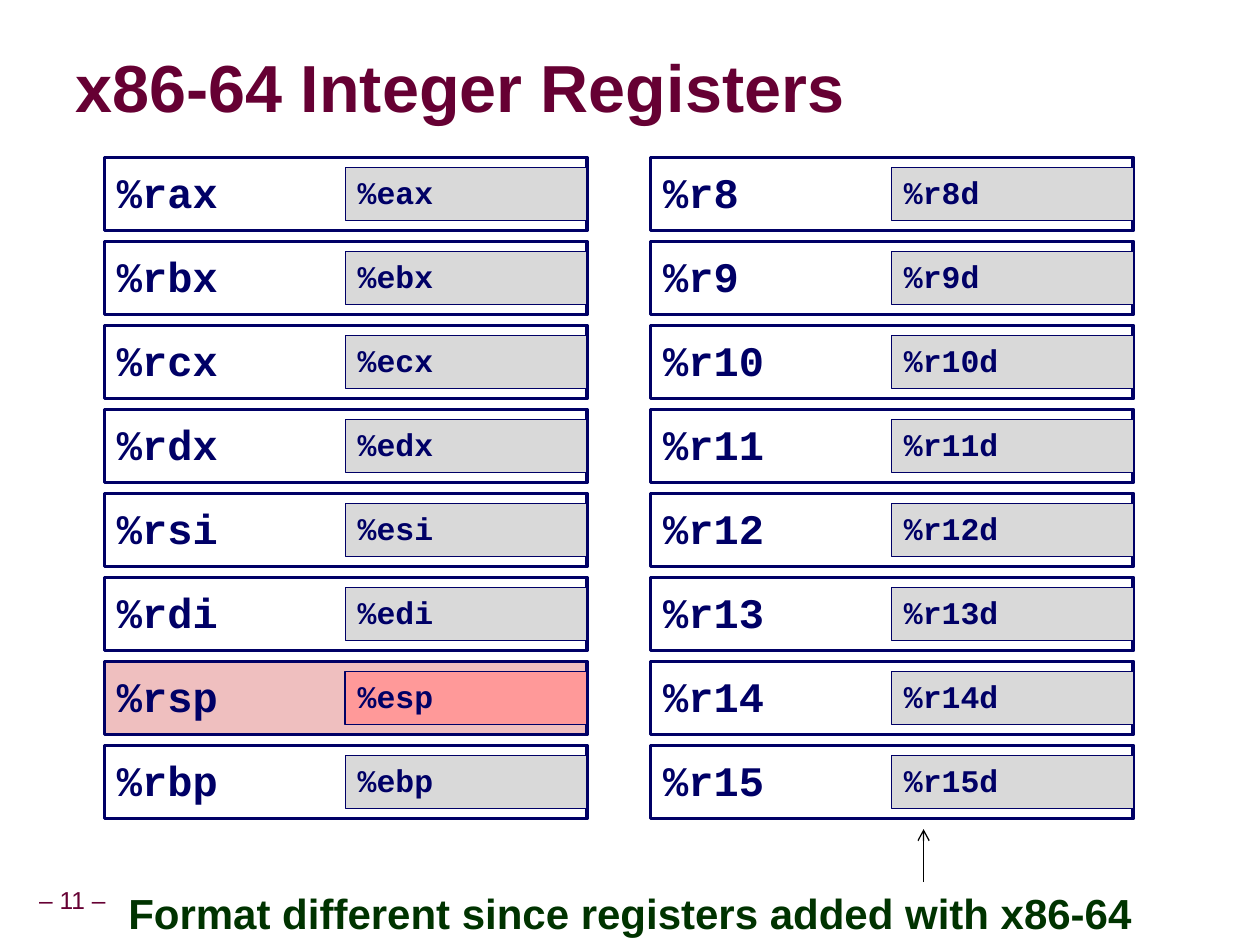
from pptx import Presentation
from pptx.dml.color import RGBColor
from pptx.enum.shapes import MSO_CONNECTOR, MSO_SHAPE
from pptx.enum.text import MSO_ANCHOR, PP_ALIGN
from pptx.oxml.ns import qn
from pptx.util import Inches, Pt
from lxml.etree import SubElement

TITLE = "x86-64 Integer Registers"
NOTE = "Format different since registers added with x86-64"
PAGE = "– 11 –"
BANKS = [
    [("%rax", "%eax"), ("%rbx", "%ebx"), ("%rcx", "%ecx"), ("%rdx", "%edx"),
     ("%rsi", "%esi"), ("%rdi", "%edi"), ("%rsp", "%esp"), ("%rbp", "%ebp")],
    [(f"%r{n}", f"%r{n}d") for n in range(8, 16)],
]
STACK = "%rsp"
COLORS = {
    "navy": "000066", "maroon": "660033", "green": "003300", "black": "000000",
    "gray": "D9D9D9", "pink": "EFBFBF", "red": "FF9999",
}
LEFT, TOP = 0.83, 1.25
STEP, PITCH = 4.335, 2 / 3
WIDE, HIGH = 3.83, 0.58
HALF, LOW = 1.92, 0.42


def color(name):
    return RGBColor.from_string(COLORS[name])


def write(shape, text, size=24, font="Arial", ink="navy", bold=True,
          align=PP_ALIGN.LEFT, anchor=MSO_ANCHOR.MIDDLE, space=0.93,
          before=0, wrap=False, inset=0.1):
    frame = shape.text_frame
    frame.word_wrap = wrap
    frame.vertical_anchor = anchor
    frame.margin_left = frame.margin_right = Inches(inset)
    frame.margin_top = frame.margin_bottom = Inches(0.05)
    para = frame.paragraphs[0]
    para.alignment = align
    para.line_spacing = space
    para.space_before = Pt(before)
    run = para.add_run()
    run.text = text
    run.font.name = font
    run.font.size = Pt(size)
    run.font.bold = bold
    run.font.color.rgb = color(ink)


def label(slide, box, text, **style):
    write(slide.shapes.add_textbox(*map(Inches, box)), text, **style)


def cell(slide, box, text, fill=None, line=2, size=24):
    shape = slide.shapes.add_shape(MSO_SHAPE.RECTANGLE, *map(Inches, box))
    shape.shadow.inherit = False
    if fill:
        shape.fill.solid()
        shape.fill.fore_color.rgb = color(fill)
    else:
        shape.fill.background()
    shape.line.color.rgb = color("navy")
    shape.line.width = Pt(line)
    write(shape, text, size=size, font="Courier New")


def arrow(slide, start, end):
    line = slide.shapes.add_connector(MSO_CONNECTOR.STRAIGHT, *map(Inches, start + end))
    line.line.color.rgb = color("black")
    line.line.width = Pt(0.75)
    SubElement(line.line._get_or_add_ln(), qn("a:tailEnd"), type="arrow")
    SubElement(line._element.spPr, qn("a:effectLst"))


def main():
    deck = Presentation()
    deck.slide_width, deck.slide_height = Inches(10), Inches(7.5)
    slide = deck.slides.add_slide(deck.slide_layouts[6])

    label(slide, (-0.09, 7, 1.33, 0.31), PAGE, size=14, ink="maroon", bold=False,
          align=PP_ALIGN.CENTER, space=0.9, inset=0.05)
    label(slide, (0.5, 0.4, 8.75, 0.65), TITLE, size=38, ink="maroon",
          space=0.87, wrap=True)

    for col, bank in enumerate(BANKS):
        left = LEFT + col * STEP
        for row, (full, part) in enumerate(bank):
            top = TOP + row * PITCH
            hot = full == STACK
            cell(slide, (left, top, WIDE, HIGH), full, fill="pink" if hot else None)
            cell(slide, (left + WIDE - HALF, top + (HIGH - LOW) / 2, HALF, LOW), part,
                 fill="red" if hot else "gray", line=1 if hot else 0.75, size=18)

    label(slide, (0.92, 7.02, 8.5, 0.48), NOTE, ink="green", space=0.95,
          before=15, anchor=MSO_ANCHOR.TOP, wrap=True)
    arrow(slide, (7.33, 7), (7.33, 6.58))
    deck.save("out.pptx")


if __name__ == "__main__":
    main()
